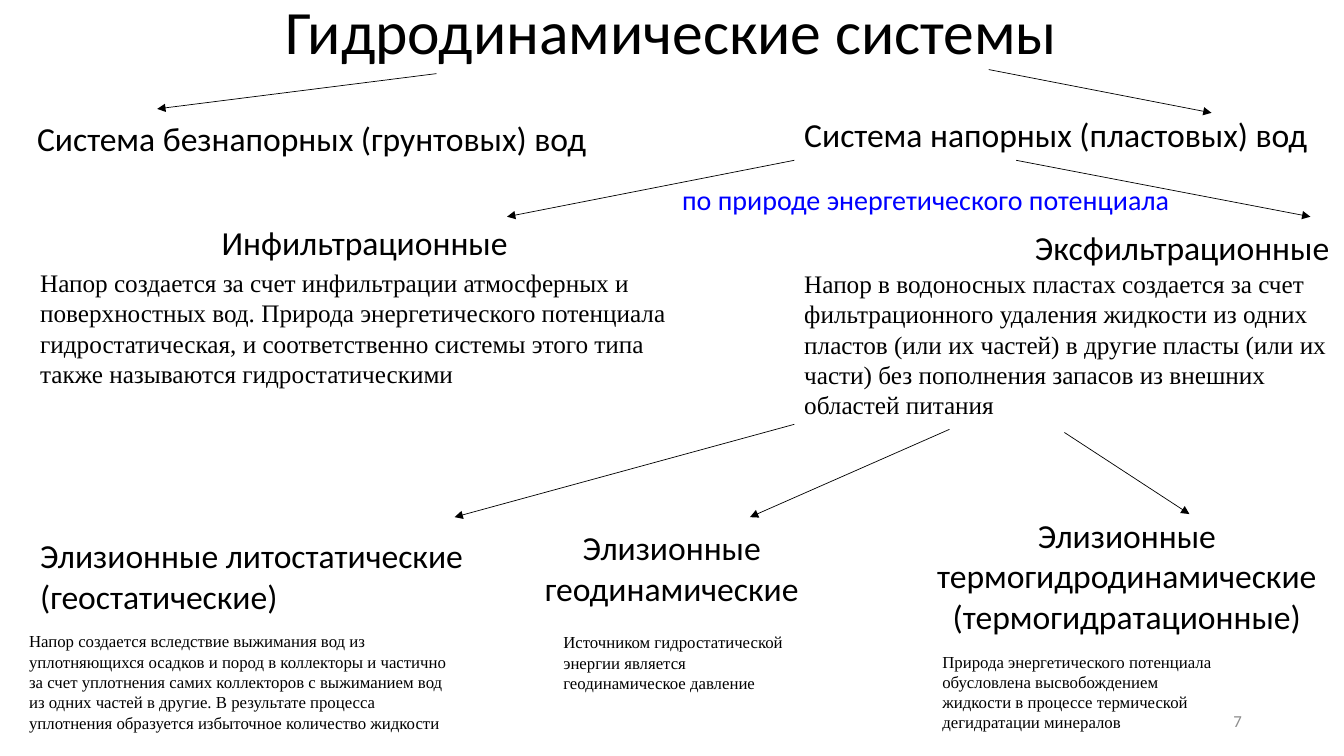
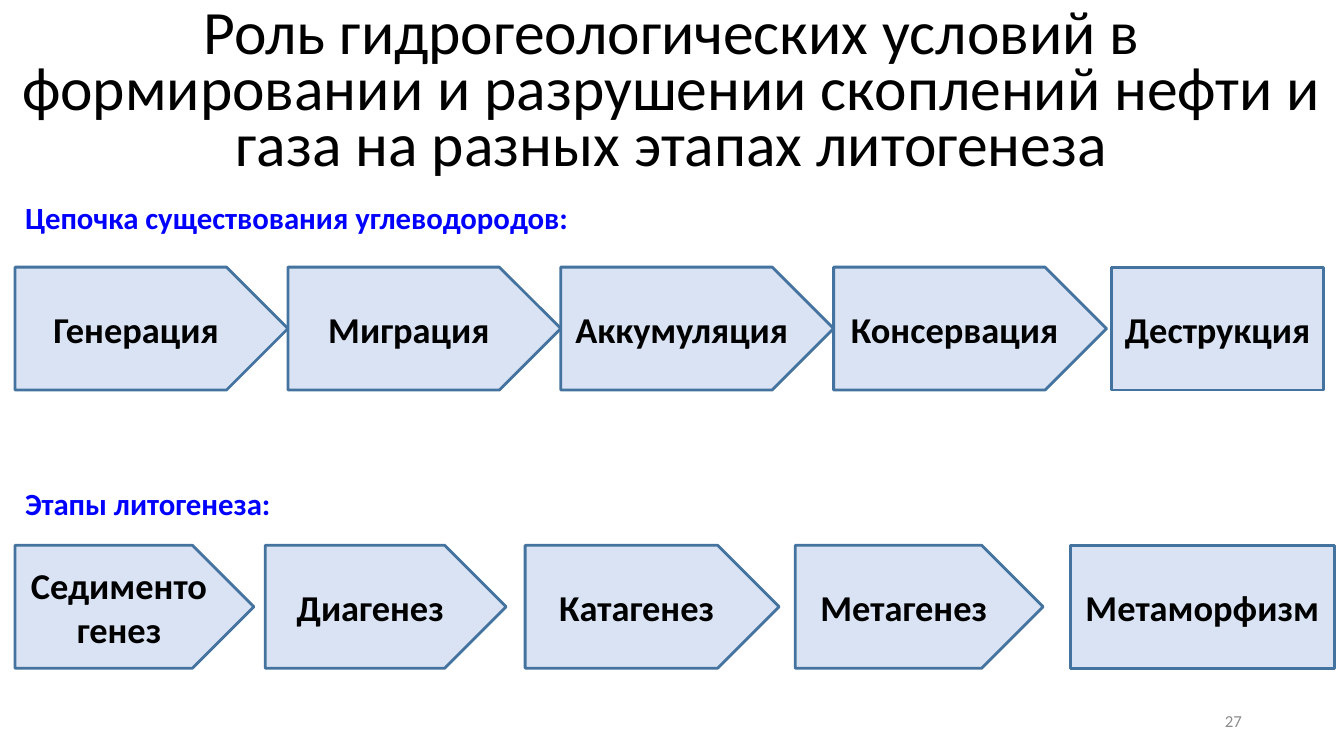
from dataclasses import dataclass
from typing import Optional

from lxml import etree
from pptx import Presentation
from pptx.dml.color import RGBColor
from pptx.enum import shapes, text
from pptx.oxml import ns
from pptx.util import Pt


@dataclass(frozen=True)
class Theme:
    black: RGBColor = RGBColor(0x00, 0x00, 0x00)
    blue: RGBColor = RGBColor(0x00, 0x00, 0xFF)
    grey: RGBColor = RGBColor(0x8C, 0x8C, 0x8C)
    step_fill: RGBColor = RGBColor(0xDA, 0xE3, 0xF3)
    step_line: RGBColor = RGBColor(0x43, 0x73, 0x9E)
    sans: str = "Calibri"
    serif: str = "Times New Roman"
    title_size: float = 44
    step_size: float = 26
    heading_size: float = 24
    chain_size: float = 22
    note_size: float = 20
    body_size: float = 18
    small_size: float = 12
    title_spacing: float = 40
    body_spacing: float = 21.7
    small_spacing: float = 14.5
    arrow_width: float = 0.5
    step_border: float = 2


THEME = Theme()
WIDTH, HEIGHT = 960, 540
LEFT, CENTER, RIGHT = text.PP_ALIGN.LEFT, text.PP_ALIGN.CENTER, text.PP_ALIGN.RIGHT


@dataclass(frozen=True)
class Style:
    size: float
    color: RGBColor = THEME.black
    font: str = THEME.sans
    bold: bool = False
    align: text.PP_ALIGN = LEFT
    spacing: Optional[float] = None
    wrap: bool = True
    grow: bool = True
    anchor: text.MSO_ANCHOR = text.MSO_ANCHOR.TOP


TITLE = Style(THEME.title_size, align=CENTER, spacing=THEME.title_spacing, grow=False)
NUMBER = Style(THEME.small_size, THEME.grey, align=RIGHT, grow=False,
               anchor=text.MSO_ANCHOR.MIDDLE)
HEADING = Style(THEME.heading_size, wrap=False)
CENTERED_HEADING = Style(THEME.heading_size, align=CENTER)
NOTE = Style(THEME.note_size, THEME.blue, wrap=False)
BODY = Style(THEME.body_size, font=THEME.serif, spacing=THEME.body_spacing)
SMALL = Style(THEME.small_size, font=THEME.serif, spacing=THEME.small_spacing)
CHAIN = Style(THEME.chain_size, THEME.blue, bold=True, wrap=False)
STEP = Style(THEME.step_size, bold=True, align=CENTER, grow=False,
             anchor=text.MSO_ANCHOR.MIDDLE)


@dataclass(frozen=True)
class Label:
    left: float
    top: float
    width: float
    height: float
    style: Style
    lines: tuple[str, ...]


@dataclass(frozen=True)
class Arrow:
    start_x: float
    start_y: float
    end_x: float
    end_y: float


@dataclass(frozen=True)
class Step:
    name: str
    left: float
    width: float


@dataclass(frozen=True)
class Chain:
    heading: Label
    top: float
    steps: tuple[Step, ...]


SYSTEM_LABELS = (
    Label(19.4, 80.6, 410.4, 36, HEADING, ("Система безнапорных (грунтовых) вод",)),
    Label(567.4, 77.8, 377.3, 36, HEADING, ("Система напорных (пластовых) вод",)),
    Label(480.2, 126.7, 378, 31.7, NOTE, ("по природе энергетического потенциала",)),
    Label(151.2, 154.8, 221, 36, HEADING, ("Инфильтрационные",)),
    Label(732.2, 158.4, 226.8, 36, HEADING, ("Эксфильтрационные",)),
    Label(21.6, 187.2, 480.2, 94.3, BODY, (
        "Напор создается за счет инфильтрации атмосферных и поверхностных вод. "
        "Природа энергетического потенциала гидростатическая, и соответственно "
        "системы этого типа также называются гидростатическими",)),
    Label(567.4, 187.9, 405.4, 116.6, BODY, (
        "Напор в водоносных пластах создается за счет фильтрационного удаления "
        "жидкости из одних пластов (или их частей) в другие пласты (или их части) "
        "без пополнения запасов из внешних областей питания",)),
    Label(21.6, 378.7, 319.7, 65.5, HEADING,
          ("Элизионные литостатические", "(геостатические)")),
    Label(370.8, 373, 218.2, 65.5, CENTERED_HEADING, ("Элизионные геодинамические",)),
    Label(637.2, 364.3, 335.5, 94.3, CENTERED_HEADING,
          ("Элизионные термогидродинамические", "(термогидратационные)")),
    Label(13.7, 447.1, 319.7, 80, SMALL, (
        "Напор создается вследствие выжимания вод из уплотняющихся осадков и пород "
        "в коллекторы и частично за счет уплотнения самих коллекторов с выжиманием "
        "вод из одних частей в другие. В результате процесса уплотнения образуется "
        "избыточное количество жидкости",)),
    Label(395.3, 447.8, 179.3, 51, SMALL, (
        "Источником гидростатической энергии является геодинамическое давление",)),
    Label(666, 461.5, 207.4, 65.5, SMALL, (
        "Природа энергетического потенциала обусловлена высвобождением жидкости "
        "в процессе термической дегидратации минералов",)),
)

SYSTEM_ARROWS = (
    Arrow(311.8, 52.6, 112.3, 77.8),
    Arrow(706.3, 49.7, 865.4, 80.6),
    Arrow(567.4, 114.5, 362.2, 154.8),
    Arrow(725.8, 114.5, 936, 154.8),
    Arrow(567.4, 303.1, 324.7, 369.4),
    Arrow(678.2, 306.7, 535.7, 369.4),
    Arrow(760.3, 308.9, 849.6, 367.2),
)

CHAIN_LEFT, STEP_HEIGHT, STEP_PITCH = 10.8, 87.8, 194.9
CHAINS = (
    Chain(
        Label(CHAIN_LEFT, 138.2, 406, 33.8, CHAIN,
              ("Цепочка существования углеводородов:",)),
        190.8,
        tuple(Step(name, CHAIN_LEFT + index * STEP_PITCH, STEP_PITCH)
              for index, name in enumerate(
                  ("Генерация", "Миграция", "Аккумуляция", "Консервация")))
        + (Step("Деструкция", 794.2, 151.2),),
    ),
    Chain(
        Label(CHAIN_LEFT, 342.7, 192.2, 33.8, CHAIN, ("Этапы литогенеза:",)),
        389.5,
        (
            Step("Седиментогенез", CHAIN_LEFT, 170.6),
            Step("Диагенез", 189.4, 172.1),
            Step("Катагенез", 375.1, 181.4),
            Step("Метагенез", 568.1, 177.1),
            Step("Метаморфизм", 764.6, 188.6),
        ),
    ),
)


def write_text(frame, lines: tuple[str, ...], style: Style) -> None:
    frame.word_wrap = style.wrap
    frame.auto_size = (text.MSO_AUTO_SIZE.SHAPE_TO_FIT_TEXT if style.grow
                       else text.MSO_AUTO_SIZE.NONE)
    frame.vertical_anchor = style.anchor
    for index, line in enumerate(lines):
        paragraph = frame.add_paragraph() if index else frame.paragraphs[0]
        paragraph.text = line
        paragraph.alignment = style.align
        if style.spacing:
            paragraph.line_spacing = Pt(style.spacing)
        font = paragraph.font
        font.name, font.size, font.bold = style.font, Pt(style.size), style.bold
        font.color.rgb = style.color


def draw_label(slide, label: Label) -> None:
    shape = slide.shapes.add_textbox(
        Pt(label.left), Pt(label.top), Pt(label.width), Pt(label.height))
    write_text(shape.text_frame, label.lines, label.style)


def draw_arrow(slide, arrow: Arrow) -> None:
    connector = slide.shapes.add_connector(
        shapes.MSO_CONNECTOR.STRAIGHT, Pt(arrow.start_x), Pt(arrow.start_y),
        Pt(arrow.end_x), Pt(arrow.end_y))
    connector.line.color.rgb = THEME.black
    connector.line.width = Pt(THEME.arrow_width)
    etree.SubElement(connector.line._get_or_add_ln(), ns.qn("a:tailEnd"), type="triangle")
    etree.SubElement(connector._element.spPr, ns.qn("a:effectLst"))


def draw_step(slide, step: Step, top: float, kind: shapes.MSO_SHAPE) -> None:
    shape = slide.shapes.add_shape(
        kind, Pt(step.left), Pt(top), Pt(step.width), Pt(STEP_HEIGHT))
    shape.shadow.inherit = False
    shape.fill.solid()
    shape.fill.fore_color.rgb = THEME.step_fill
    shape.line.color.rgb = THEME.step_line
    shape.line.width = Pt(THEME.step_border)
    write_text(shape.text_frame, (step.name,), STEP)


def draw_chain(slide, chain: Chain) -> None:
    draw_label(slide, chain.heading)
    *stages, final = chain.steps
    for step in stages:
        draw_step(slide, step, chain.top, shapes.MSO_SHAPE.PENTAGON)
    draw_step(slide, final, chain.top, shapes.MSO_SHAPE.FLOWCHART_PROCESS)


def add_slide(presentation, title: str, title_height: float, number: int):
    slide = presentation.slides.add_slide(presentation.slide_layouts[6])
    draw_label(slide, Label(678.2, 500.4, 216, 28.8, NUMBER, (str(number),)))
    draw_label(slide, Label(0, 4.3, WIDTH, title_height, TITLE, (title,)))
    return slide


def main() -> None:
    presentation = Presentation()
    presentation.slide_width, presentation.slide_height = Pt(WIDTH), Pt(HEIGHT)

    systems = add_slide(presentation, "Гидродинамические системы", 49, 7)
    for arrow in SYSTEM_ARROWS:
        draw_arrow(systems, arrow)
    for label in SYSTEM_LABELS:
        draw_label(systems, label)

    lithogenesis = add_slide(
        presentation,
        "Роль гидрогеологических условий в формировании и разрушении скоплений "
        "нефти и газа на разных этапах литогенеза", 139.7, 27)
    for chain in CHAINS:
        draw_chain(lithogenesis, chain)

    presentation.save("out.pptx")


if __name__ == "__main__":
    main()
